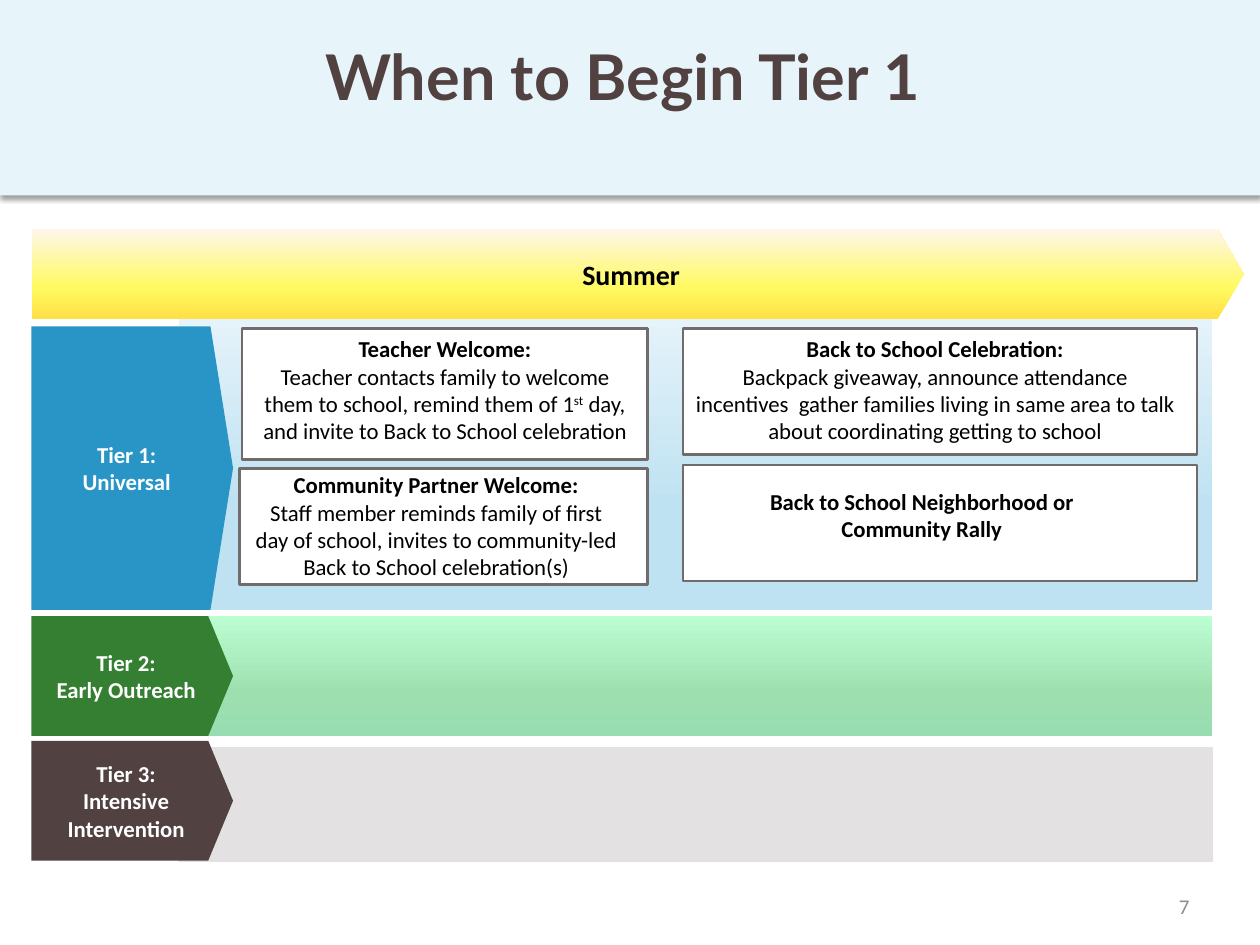
from copy import deepcopy
from dataclasses import dataclass

from pptx import Presentation
from pptx.dml.color import RGBColor
from pptx.enum.shapes import MSO_SHAPE
from pptx.enum.text import MSO_ANCHOR, MSO_AUTO_SIZE, PP_ALIGN
from pptx.oxml import parse_xml
from pptx.oxml.ns import nsdecls, qn
from pptx.util import Inches, Pt

RECTANGLE, PENTAGON = MSO_SHAPE.RECTANGLE, MSO_SHAPE.PENTAGON
TOP, MIDDLE = MSO_ANCHOR.TOP, MSO_ANCHOR.MIDDLE
CENTER, RIGHT = PP_ALIGN.CENTER, PP_ALIGN.RIGHT
NO_AUTOFIT = MSO_AUTO_SIZE.NONE

COLORS = {
    "header": "E7F4FA", "title": "514141", "number": "8C8C8C",
    "white": "FFFFFF", "black": "000000", "card line": "726B6B",
    "tier 1": "2995C7", "tier 2": "347F32", "tier 3": "514141",
    "gray band": "E3E1E1",
}
# Gradient colours from bottom to top
GRADIENTS = {
    "blue": ("BFE2F2", "BFE2F2", "E7F4FA"),
    "green": ("97DDB1", "9EDFAF", "BBFED1"),
    "summer": ("FFE146", "FFFA61", "FFF6EA"),
}
GRADIENT_POSITIONS = (0, 0.35, 1)
LEFT = 0.25
BAND_LEFT, BAND_WIDTH = 1.42, 8.2
TIER_WIDTH = 1.6

Box = tuple[float, float, float, float]


@dataclass
class Tier:
    lines: list[str]
    color: str
    top: float
    height: float
    point: float


@dataclass
class Card:
    heading: str
    body: list[str]  # every second part is superscript
    frame: Box
    text_box: Box


TIERS = [
    Tier(["Tier 1:", "Universal"], "tier 1", 2.59, 2.25, 0.112),
    Tier(["Tier 2:", "Early Outreach"], "tier 2", 4.89, 0.95, 0.207),
    Tier(["Tier 3:", "Intensive Intervention"], "tier 3", 5.88, 0.95, 0.207),
]
CARDS = [
    Card("Teacher Welcome:",
         ["Teacher contacts family to welcome them to school, remind them of 1", "st",
          " day, and invite to Back to School celebration"],
         (1.92, 2.61, 3.22, 1.04), (1.92, 2.61, 3.22, 0.98)),
    Card("Community Partner Welcome:",
         ["Staff member reminds family of first day of school, invites to "
          "community-led Back to School celebration(s)"],
         (1.9, 3.72, 3.24, 0.92), (1.92, 3.69, 3.08, 1.19)),
    Card("Back to School Celebration:",
         ["Backpack giveaway, announce attendance incentives  gather families "
          "living in same area to talk about coordinating getting to school"],
         (5.42, 2.61, 4.08, 1), (5.42, 2.61, 4, 0.98)),
    Card("Back to School Neighborhood or Community Rally", [],
         (5.42, 3.69, 4.08, 0.92), (5.58, 3.82, 3.47, 0.54)),
]


def rgb(name: str) -> RGBColor:
    return RGBColor.from_string(COLORS[name])


def add_block(slide, kind, box: Box, color: str, line: str = "", line_width: float = 0):
    """Add a solid or gradient shape, with an outline if one is named."""
    shape = slide.shapes.add_shape(kind, *map(Inches, box))
    shape.shadow.inherit = False
    if color in GRADIENTS:
        shape.fill.gradient()
        shape.fill.gradient_angle = 90
        stop_list = shape._element.spPr.find(qn("a:gradFill")).find(qn("a:gsLst"))
        stop_list.append(deepcopy(stop_list[-1]))
        stops = zip(shape.fill.gradient_stops, GRADIENT_POSITIONS, GRADIENTS[color])
        for stop, position, value in stops:
            stop.position = position
            stop.color.rgb = RGBColor.from_string(value)
    else:
        shape.fill.solid()
        shape.fill.fore_color.rgb = rgb(color)
    if line:
        shape.line.color.rgb = rgb(line)
        shape.line.width = Pt(line_width)
    else:
        shape.line.fill.background()
    return shape


def format_paragraph(paragraph, size: float, color: str, bold: bool = False,
                     align=CENTER, font: str = "Calibri") -> None:
    paragraph.alignment = align
    paragraph.font.name = font
    paragraph.font.size = Pt(size)
    paragraph.font.bold = bold
    paragraph.font.color.rgb = rgb(color)


def write_lines(shape, lines: list[str], size: float, color: str, bold: bool = False,
                align=CENTER, anchor=MIDDLE, font: str = "Calibri") -> None:
    frame = shape.text_frame
    frame.word_wrap = True
    frame.vertical_anchor = anchor
    frame.text = "\n".join(lines)
    for paragraph in frame.paragraphs:
        format_paragraph(paragraph, size, color, bold, align, font)


def add_tier(slide, tier: Tier) -> None:
    box = (LEFT, tier.top, TIER_WIDTH, tier.height)
    arrow = add_block(slide, PENTAGON, box, tier.color)
    arrow.adjustments[0] = tier.point
    write_lines(arrow, tier.lines, 13, "white", bold=True)


def add_card(slide, card: Card) -> None:
    add_block(slide, RECTANGLE, card.frame, "white", "card line", 1.5)
    text_box = slide.shapes.add_textbox(*map(Inches, card.text_box))
    write_lines(text_box, [card.heading], 13, "black", bold=True, anchor=TOP)
    if card.body:
        paragraph = text_box.text_frame.add_paragraph()
        format_paragraph(paragraph, 13, "black")
        for index, part in enumerate(card.body):
            run = paragraph.add_run()
            run.text = part
            if index % 2:
                run._r.get_or_add_rPr().set("baseline", "30000")


def add_header(slide) -> None:
    header = add_block(slide, RECTANGLE, (0, 0, 10, 1.55), "header")
    properties = header._element.spPr
    properties.remove(properties.find(qn("a:effectLst")))
    properties.append(parse_xml(
        f'<a:effectLst {nsdecls("a")}><a:outerShdw blurRad="{Pt(3.1)}" dist="{Pt(1.6)}" '
        'dir="5400000" rotWithShape="0"><a:srgbClr val="000000"><a:alpha val="38000"/>'
        '</a:srgbClr></a:outerShdw></a:effectLst>'))
    # Keep the header behind the title
    slide.shapes._spTree.insert(2, header._element)


def main() -> None:
    presentation = Presentation()
    presentation.slide_width, presentation.slide_height = Inches(10), Inches(7.5)
    slide = presentation.slides.add_slide(presentation.slide_layouts[5])

    # Header and title
    add_header(slide)
    title = slide.shapes.title
    title.left, title.top, title.width, title.height = map(Inches, (LEFT, 0.25, 9.38, 1.3))
    write_lines(title, ["When to Begin Tier 1"], 36, "title", bold=True,
                anchor=TOP, font="Lato")
    title.text_frame.auto_size = NO_AUTOFIT

    # Bands behind the tiers
    add_block(slide, RECTANGLE, (BAND_LEFT, 5.93, BAND_WIDTH, 0.91),
              "gray band", "gray band", 0.75)
    add_block(slide, RECTANGLE, (BAND_LEFT, 4.89, BAND_WIDTH, 0.95), "green")
    add_block(slide, RECTANGLE, (BAND_LEFT, 2.44, BAND_WIDTH, 2.4), "blue")

    # Tier labels, season arrow and activity cards
    for tier in TIERS:
        add_tier(slide, tier)
    summer = add_block(slide, PENTAGON, (LEFT, 1.82, 9.62, 0.71), "summer")
    summer.adjustments[0] = 0.289
    write_lines(summer, ["Summer"], 16, "black", bold=True)
    for card in CARDS:
        add_card(slide, card)

    # Slide number
    number = slide.shapes.add_textbox(*map(Inches, (7.21, 6.99, 2.33, 0.4)))
    write_lines(number, ["7"], 12, "number", align=RIGHT)

    presentation.save("out.pptx")


if __name__ == "__main__":
    main()
